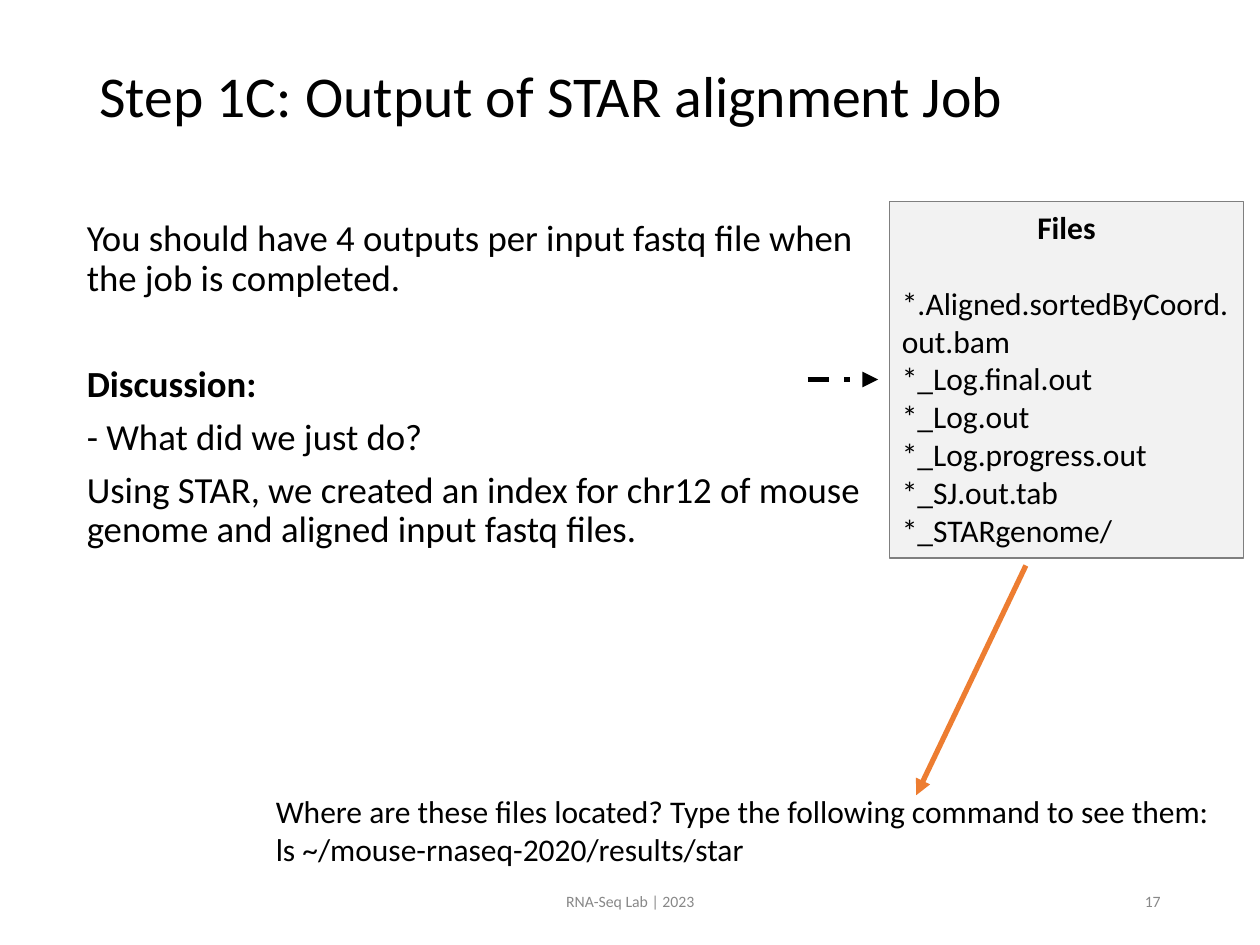
from lxml import etree
from pptx import Presentation
from pptx import util as u
from pptx.dml.color import RGBColor
from pptx.enum import dml, shapes, text
from pptx.oxml import ns


def paint(value):
    return RGBColor.from_string(value)


class PageBuilder:
    """Holds the style and the current slide, and adds each kind of element."""

    font = "Calibri"
    ink = "000000"
    grey = "888888"

    def __init__(self, deck):
        self.page = deck.slides.add_slide(deck.slide_layouts[5])

    def fill_text(self, box, lines, size, color=None, align=text.PP_ALIGN.LEFT,
                  anchor=text.MSO_ANCHOR.TOP, spacing=None):
        frame = box.text_frame
        frame.word_wrap = True
        frame.auto_size = text.MSO_AUTO_SIZE.NONE
        frame.vertical_anchor = anchor
        for index, line in enumerate(lines):
            para = frame.paragraphs[0] if index == 0 else frame.add_paragraph()
            para.text = line
            para.alignment = align
            para.line_spacing = spacing
            para.font.name = self.font
            para.font.size = u.Pt(size)
            para.font.bold = False
            para.font.color.rgb = paint(color or self.ink)
        return frame

    def title(self, line, area):
        box = self.page.shapes.title
        box.left, box.top, box.width, box.height = map(u.Cm, area)
        self.fill_text(box, [line], 33, anchor=text.MSO_ANCHOR.MIDDLE, spacing=0.9)

    def textbox(self, lines, area, size, **style):
        box = self.page.shapes.add_textbox(*map(u.Cm, area))
        return self.fill_text(box, lines, size, **style)

    def footer(self, line, area, align):
        self.textbox([line], area, 9, color=self.grey, align=align,
                     anchor=text.MSO_ANCHOR.MIDDLE)

    def panel(self, lines, area, size):
        box = self.page.shapes.add_shape(shapes.MSO_SHAPE.RECTANGLE, *map(u.Cm, area))
        box.shadow.inherit = False
        box.fill.solid()
        box.fill.fore_color.rgb = paint("F2F2F2")
        box.line.color.rgb = paint("7F7F7F")
        box.line.width = u.Pt(0.75)
        return self.fill_text(box, lines, size)

    def arrow(self, start, end, color, dash=None):
        line = self.page.shapes.add_connector(
            shapes.MSO_CONNECTOR.STRAIGHT, *map(u.Cm, start + end))
        line.line.color.rgb = paint(color)
        line.line.width = u.Pt(3)
        if dash:
            line.line.dash_style = dash
        properties = line._element.spPr
        outline = properties.find(ns.qn("a:ln"))
        etree.SubElement(outline, ns.qn("a:tailEnd"), type="triangle")
        etree.SubElement(properties, ns.qn("a:effectLst"))


def main():
    deck = Presentation()
    deck.slide_width, deck.slide_height = u.Cm(25.4), u.Cm(19.05)
    builder = PageBuilder(deck)

    builder.title("Step 1C: Output of STAR alignment Job", (1.75, 0.15, 21.9, 3.68))

    body = builder.textbox([
        "You should have 4 outputs per input fastq file when the job is completed.",
        "Discussion:",
        "- What did we just do?",
        "Using STAR, we created an index for chr12 of mouse genome and aligned input fastq files.",
    ], (1.5, 3.23, 16.2, 13.13), 21, spacing=0.9)
    body.margin_top = u.Cm(1.2)
    for para, gap in zip(body.paragraphs[1:], (38, 7.5, 7.5)):
        para.space_before = u.Pt(gap)
    body.paragraphs[1].font.bold = True

    files = builder.panel([
        "Files",
        "*.Aligned.sortedByCoord.out.bam",
        "*_Log.final.out",
        "*_Log.out",
        "*_Log.progress.out",
        "*_SJ.out.tab",
        "*_STARgenome/",
    ], (17.93, 4.06, 7.14, 7.19), 18)
    heading = files.paragraphs[0]
    heading.alignment = text.PP_ALIGN.CENTER
    heading.font.bold = True
    heading.space_after = u.Pt(22)

    builder.arrow((16.28, 7.65), (17.7, 7.65), builder.ink, dml.MSO_LINE.DASH_DOT)
    builder.textbox([
        "Where are these files located? Type the following command to see them:",
        "ls ~/mouse-rnaseq-2020/results/star",
    ], (5.31, 15.85, 19.89, 1.8), 18)
    builder.arrow((20.68, 11.4), (18.47, 16.03), "ED7D31")

    builder.footer("RNA-Seq Lab | 2023", (8.41, 17.65, 8.59, 1.02), text.PP_ALIGN.CENTER)
    builder.footer("17", (17.93, 17.65, 5.72, 1.02), text.PP_ALIGN.RIGHT)

    deck.save("out.pptx")


if __name__ == "__main__":
    main()
